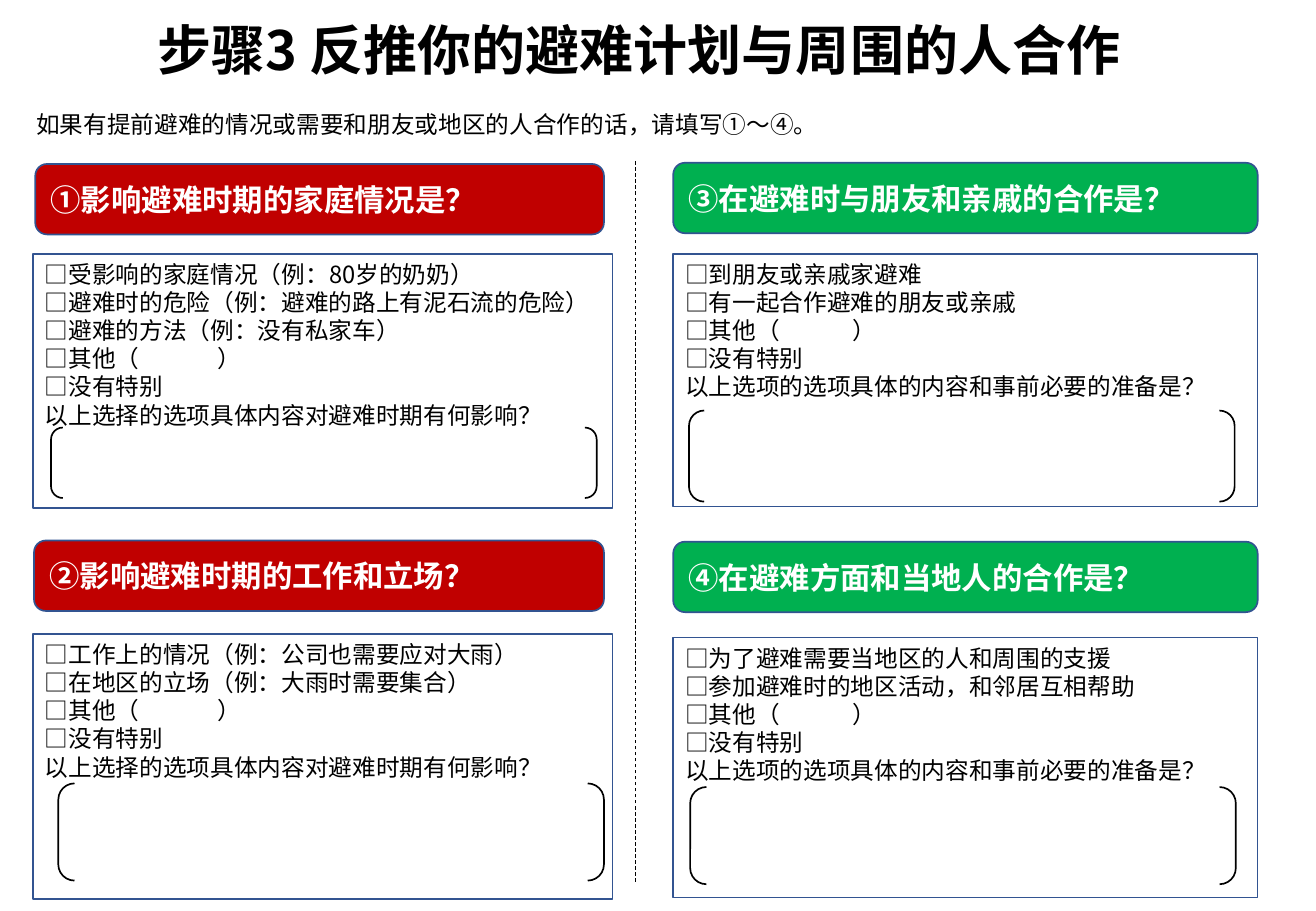
"""Build the worksheet slide for planning an evacuation together with others."""
from lxml.etree import SubElement
from pptx import Presentation
from pptx.dml.color import RGBColor
from pptx.enum.dml import MSO_LINE
from pptx.enum.lang import MSO_LANGUAGE_ID
from pptx.enum.shapes import MSO_CONNECTOR, MSO_SHAPE
from pptx.enum.text import MSO_ANCHOR, PP_ALIGN
from pptx.oxml.ns import qn
from pptx.util import Inches, Pt

FONT = "Noto Sans CJK SC"
BLACK, WHITE, RED, GREEN, BLUE = "000000", "FFFFFF", "C00000", "00B050", "325491"

TITLE = "步骤3 反推你的避难计划与周围的人合作"
GUIDE = "如果有提前避难的情况或需要和朋友或地区的人合作的话，请填写①～④。"
IMPACT = "以上选择的选项具体内容对避难时期有何影响？"
PREPARATION = "以上选项的选项具体的内容和事前必要的准备是？"
OTHER, NONE = "□其他（\t）", "□没有特别"

SECTIONS = [
    {"heading": "①影响避难时期的家庭情况是？", "color": RED, "blank_end": 1.42,
     "banner": (0.29, 1.35, 4.68, 0.58), "panel": (0.27, 2.09, 4.77, 2.09),
     "bracket": (0.42, 3.52, 4.49, 0.58),
     "lines": ["□受影响的家庭情况（例：80岁的奶奶）",
               "□避难时的危险（例：避难的路上有泥石流的危险）",
               "□避难的方法（例：没有私家车）", OTHER, NONE, IMPACT]},
    {"heading": "②影响避难时期的工作和立场？", "color": RED, "blank_end": 1.42,
     "banner": (0.28, 4.45, 4.69, 0.58), "panel": (0.27, 5.22, 4.77, 2.18),
     "bracket": (0.48, 6.45, 4.49, 0.8),
     "lines": ["□工作上的情况（例：公司也需要应对大雨）",
               "□在地区的立场（例：大雨时需要集合）", OTHER, NONE, IMPACT]},
    {"heading": "③在避难时与朋友和亲戚的合作是？", "color": GREEN, "blank_end": 1.38,
     "banner": (5.54, 1.34, 4.81, 0.58), "panel": (5.54, 2.09, 4.81, 2.08),
     "bracket": (5.67, 3.38, 4.49, 0.75),
     "lines": ["□到朋友或亲戚家避难", "□有一起合作避难的朋友或亲戚",
               OTHER, NONE, PREPARATION]},
    {"heading": "④在避难方面和当地人的合作是？", "color": GREEN, "blank_end": 1.38,
     "banner": (5.54, 4.46, 4.81, 0.58), "panel": (5.54, 5.25, 4.81, 2.14),
     "bracket": (5.68, 6.48, 4.49, 0.8),
     "lines": ["□为了避难需要当地区的人和周围的支援",
               "□参加避难时的地区活动，和邻居互相帮助", OTHER, NONE, PREPARATION]},
]


def rgb(color):
    return RGBColor.from_string(color)


def add_box(page, kind, place, fill=None, line=BLUE):
    box = page.shapes.add_shape(kind, *map(Inches, place))
    box.shadow.inherit = False
    if fill:
        box.fill.solid()
        box.fill.fore_color.rgb = rgb(fill)
    else:
        box.fill.background()
    box.line.color.rgb = rgb(line)
    box.line.width = Pt(1)
    return box


def write(box, lines, size, color=BLACK, bold=False, align=PP_ALIGN.LEFT,
          anchor=MSO_ANCHOR.MIDDLE, spacing=None, blank_end=None):
    frame = box.text_frame
    frame.word_wrap = True
    frame.vertical_anchor = anchor
    for index, text in enumerate(lines):
        para = frame.paragraphs[0] if index == 0 else frame.add_paragraph()
        para.alignment = align
        para.line_spacing = spacing
        if "\t" in text:
            stops = SubElement(para._p.get_or_add_pPr(), qn("a:tabLst"))
            SubElement(stops, qn("a:tab"), pos=str(Inches(blank_end)), algn="l")
        span = para.add_run()
        span.text = text
        span.font.size = Pt(size)
        span.font.bold = bold
        span.font.color.rgb = rgb(color)
        span.font.name = FONT
        span.font.language_id = MSO_LANGUAGE_ID.SIMPLIFIED_CHINESE
        SubElement(span.font._element, qn("a:ea"), typeface=FONT)


def add_section(page, section):
    banner = add_box(page, MSO_SHAPE.ROUNDED_RECTANGLE, section["banner"], section["color"])
    write(banner, [section["heading"]], 18, WHITE, bold=True)
    panel = add_box(page, MSO_SHAPE.RECTANGLE, section["panel"])
    write(panel, section["lines"], 14, anchor=MSO_ANCHOR.TOP, spacing=Pt(16.7),
          blank_end=section["blank_end"])
    add_box(page, MSO_SHAPE.DOUBLE_BRACKET, section["bracket"], line=BLACK)


def add_divider(page):
    divider = page.shapes.add_connector(
        MSO_CONNECTOR.STRAIGHT, *map(Inches, (5.23, 7.26, 5.23, 1.31)))
    divider.line.color.rgb = rgb(BLACK)
    divider.line.width = Pt(0.5)
    divider.line.dash_style = MSO_LINE.DASH
    SubElement(divider._element.spPr, qn("a:effectLst"))


def main():
    deck = Presentation()
    deck.slide_width, deck.slide_height = Inches(10.83), Inches(7.5)
    page = deck.slides.add_slide(deck.slide_layouts[6])
    title = page.shapes.add_textbox(*map(Inches, (0, 0.05, 10.52, 0.71)))
    write(title, [TITLE], 32, bold=True, align=PP_ALIGN.CENTER)
    guide = page.shapes.add_textbox(*map(Inches, (0.2, 0.8, 9.81, 0.45)))
    write(guide, [GUIDE], 14)
    for section in SECTIONS:
        add_section(page, section)
    add_divider(page)
    deck.save("out.pptx")


if __name__ == "__main__":
    main()
